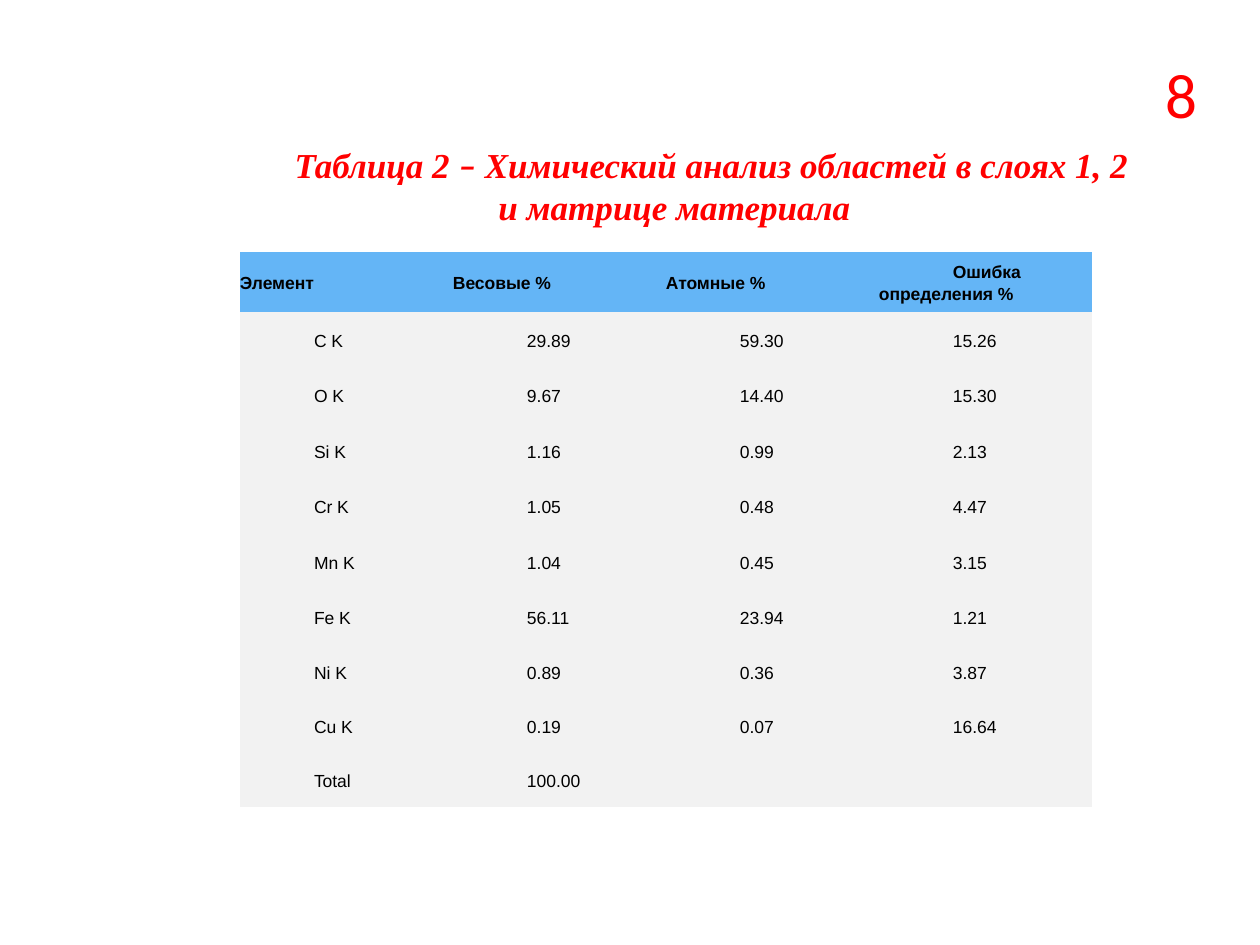
import dataclasses
import pptx
import pptx.dml.color
import pptx.enum.text
import pptx.oxml.ns
import pptx.util

PX = 914400 / 126
PLAIN = "{2D5ABB26-0587-4C30-8999-92F81FD0307C}"
ROWS = [
    ["Элемент", "Весовые %", "Атомные %", "Ошибка определения %"],
    ["C K", "29.89", "59.30", "15.26"],
    ["O K", "9.67", "14.40", "15.30"],
    ["Si K", "1.16", "0.99", "2.13"],
    ["Cr K", "1.05", "0.48", "4.47"],
    ["Mn K", "1.04", "0.45", "3.15"],
    ["Fe K", "56.11", "23.94", "1.21"],
    ["Ni K", "0.89", "0.36", "3.87"],
    ["Cu K", "0.19", "0.07", "16.64"],
    ["Total", "100.00", "", ""],
]
HEIGHTS = [60] + [56, 55] * 3 + [54] * 3


@dataclasses.dataclass(frozen=True)
class Theme:
    """Hold the colours, fonts and type sizes of the slide."""
    red: str = "FF0000"
    ink: str = "000000"
    head: str = "64B5F6"
    body: str = "F2F2F2"
    serif: str = "Times New Roman"
    sans: str = "Arial"
    plain: str = "Calibri"
    cell: int = 10
    title: int = 20
    number: int = 36
    indent: int = 74


THEME = Theme()


def emu(px):
    """Turn pixels into EMU."""
    return pptx.util.Emu(round(px * PX))


def paint(color):
    """Make a colour from its hex code."""
    return pptx.dml.color.RGBColor.from_string(color)


def write(frame, *parts, size, color, bold=False, italic=False,
          center=False, indent=0, leading=None, after=None):
    """Write (text, font) parts as one formatted paragraph."""
    para = frame.paragraphs[0]
    if center:
        para.alignment = pptx.enum.text.PP_ALIGN.CENTER
    if indent:
        props = para._p.get_or_add_pPr()
        props.set("marL", "0")
        props.set("indent", str(emu(indent)))
    if leading:
        para.line_spacing = leading
    if after:
        para.space_after = pptx.util.Pt(after)
    for text, font in parts:
        run = para.add_run()
        run.text = text
        run.font.name = font
        run.font.size = pptx.util.Pt(size)
        run.font.bold = bold
        run.font.italic = italic
        run.font.color.rgb = paint(color)


def add_title(slide):
    """Place and fill the title above the table."""
    title = slide.shapes.title
    title.left, title.top, title.width, title.height = map(emu, (197, 137, 955, 97))
    frame = title.text_frame
    frame.word_wrap = True
    frame.auto_size = pptx.enum.text.MSO_AUTO_SIZE.SHAPE_TO_FIT_TEXT
    frame.vertical_anchor = pptx.enum.text.MSO_ANCHOR.MIDDLE
    write(frame, ("Таблица 2 ", THEME.serif), ("–", THEME.plain),
          (" Химический анализ областей в слоях 1, 2 и матрице материала", THEME.serif),
          size=THEME.title, color=THEME.red, bold=True, italic=True,
          center=True, indent=THEME.indent)


def add_number(slide):
    """Add the slide number in the top right corner."""
    frame = slide.shapes.add_textbox(*map(emu, (1152, 49, 58, 89))).text_frame
    frame.word_wrap = False
    frame.auto_size = pptx.enum.text.MSO_AUTO_SIZE.SHAPE_TO_FIT_TEXT
    write(frame, ("8", THEME.plain), size=THEME.number, color=THEME.red, center=True)


def fill_cell(cell, text, head, indent):
    """Fill and format one table cell."""
    cell.fill.solid()
    cell.fill.fore_color.rgb = paint(THEME.head if head else THEME.body)
    cell.vertical_anchor = pptx.enum.text.MSO_ANCHOR.MIDDLE
    cell.margin_left = cell.margin_right = cell.margin_top = cell.margin_bottom = 0
    if text:
        write(cell.text_frame, (text, THEME.sans), size=THEME.cell, color=THEME.ink,
              bold=head, indent=indent, leading=1.15, after=10)


def add_grid(slide):
    """Add the table of element shares."""
    count = len(ROWS[0])
    grid = slide.shapes.add_table(
        len(ROWS), count, *map(emu, (240, 252, 213 * count, sum(HEIGHTS)))).table
    grid.first_row = grid.horz_banding = False
    grid._tbl.tblPr.find(pptx.oxml.ns.qn("a:tableStyleId")).text = PLAIN
    for r, (texts, height) in enumerate(zip(ROWS, HEIGHTS)):
        grid.rows[r].height = emu(height)
        for c, text in enumerate(texts):
            head = r == 0
            flush = head and c < count - 1
            fill_cell(grid.cell(r, c), text, head, 0 if flush else THEME.indent)


def main():
    """Build and save the slide."""
    deck = pptx.Presentation()
    deck.slide_width, deck.slide_height = emu(1260), emu(945)
    slide = deck.slides.add_slide(deck.slide_layouts[5])
    add_grid(slide)
    add_title(slide)
    add_number(slide)
    deck.save("out.pptx")


if __name__ == "__main__":
    main()
